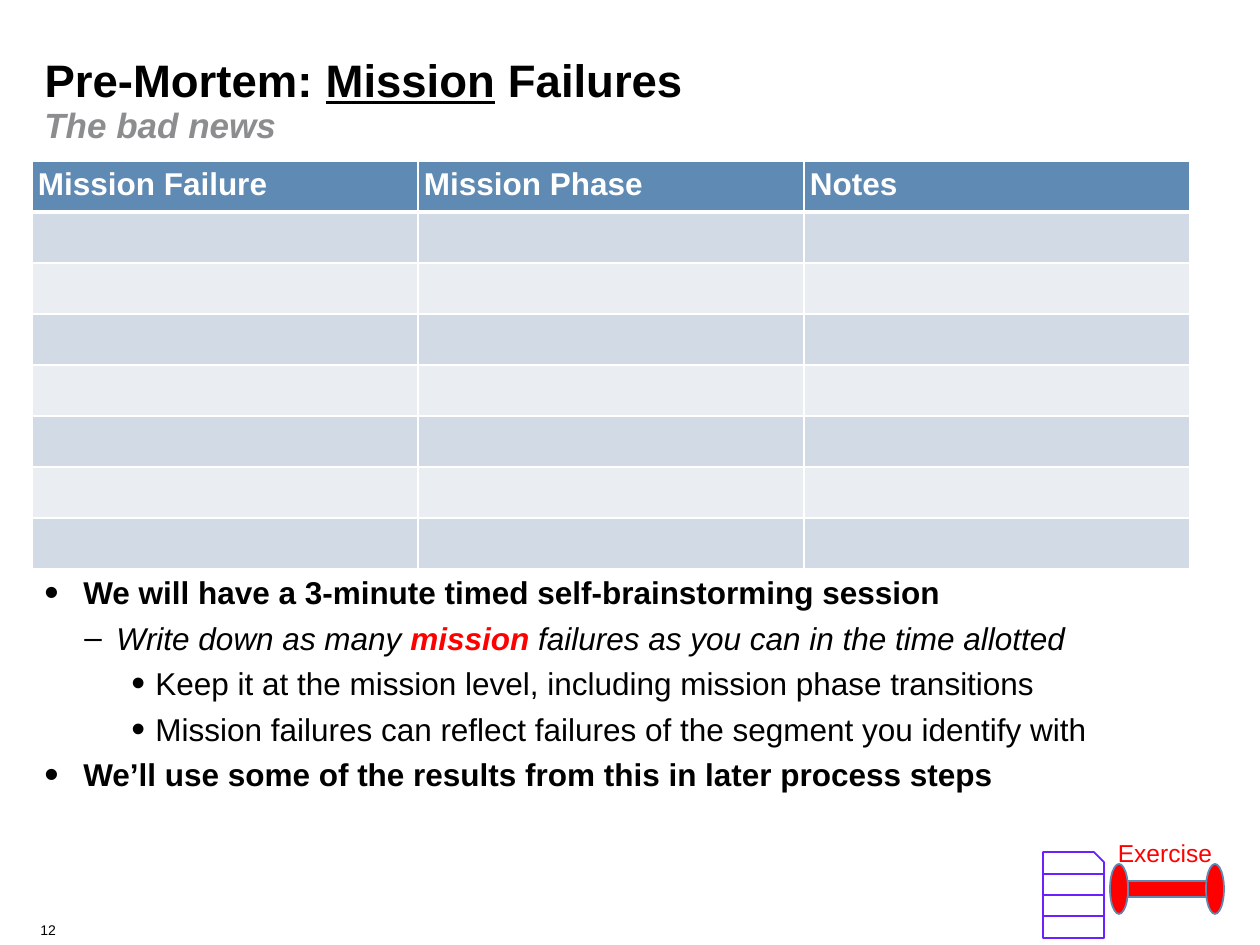
from lxml import etree
from pptx import Presentation
from pptx import util as u
from pptx.dml.color import RGBColor
from pptx.enum import shapes, text
from pptx.oxml.ns import qn

# Content: a run is (text, style), style letters: b bold, i italic, u underline, r red
TITLE = [("Pre-Mortem: ", "b"), ("Mission", "bu"), (" Failures", "b")]
SUBTITLE = [("The bad news", "bi")]
HEADINGS = ["Mission Failure", "Mission Phase", "Notes"]
EMPTY_ROWS = 7
POINTS = [
    (0, [("We will have a 3-minute timed self-brainstorming session", "b")]),
    (1, [("Write down as many ", "i"), ("mission", "bir"),
         (" failures as you can in the time allotted", "i")]),
    (2, [("Keep it at the mission level, including mission phase transitions", "")]),
    (2, [("Mission failures can reflect failures of the segment you identify with", "")]),
    (0, [("We’ll use some of the results from this in later process steps", "b")]),
]
# Per level: text margin px, hanging px, bullet, bullet size %
LEVELS = [(39, 39, "•", 130), (72, 32, "–", 100), (111, 24, "•", 125)]

FONT = "Arial"
BLACK, WHITE, RED, GREY = "000000", "FFFFFF", "FF0000", "8C8D8E"
BLUE, PURPLE, BANDS = "5E8AB4", "6A20FF", ["D2DAE5", "EAEDF2"]
SCALE = 914400 / 126


def px(n):
    return u.Emu(round(n * SCALE))


def rgb(value):
    return RGBColor.from_string(value)


def write(paragraph, runs, size, color=BLACK):
    for words, style in runs:
        run = paragraph.add_run()
        run.text = words
        font = run.font
        font.name, font.size = FONT, u.Pt(size)
        font.bold, font.italic, font.underline = (s in style for s in "biu")
        font.color.rgb = rgb(RED if "r" in style else color)


def text_box(parent, left, top, width, height):
    frame = parent.shapes.add_textbox(*map(px, (left, top, width, height))).text_frame
    frame.word_wrap = True
    return frame


def add_bullet(paragraph, level):
    margin, hanging, char, percent = LEVELS[level]
    paragraph.level = level
    props = paragraph._p.get_or_add_pPr()
    props.set("marL", str(px(margin)))
    props.set("indent", str(-px(hanging)))
    for tag, key, value in [("a:buSzPct", "val", str(percent * 1000)),
                            ("a:buFont", "typeface", FONT),
                            ("a:buChar", "char", char)]:
        etree.SubElement(props, qn(tag)).set(key, value)


def add_borders(cell, bottom):
    props = cell._tc.get_or_add_tcPr()
    for i, (side, points) in enumerate([("L", 1), ("R", 1), ("T", 1), ("B", bottom)]):
        line = etree.Element(qn("a:ln" + side), w=str(u.Pt(points)))
        fill = etree.SubElement(line, qn("a:solidFill"))
        etree.SubElement(fill, qn("a:srgbClr"), val=WHITE)
        props.insert(i, line)


def add_shape(group, kind, box, fill, line):
    shape = group.shapes.add_shape(kind, *map(px, box))
    shape.shadow.inherit = False
    shape.fill.solid()
    shape.fill.fore_color.rgb = rgb(fill)
    shape.line.color.rgb = rgb(line)
    shape.line.width = u.Pt(1)


prs = Presentation()
prs.slide_width, prs.slide_height = px(1260), px(945)
slide = prs.slides.add_slide(prs.slide_layouts[5])

# Title and subtitle
title = slide.shapes.title
title.left, title.top, title.width, title.height = map(px, (32, 41, 1134, 72))
title.text_frame.vertical_anchor = text.MSO_ANCHOR.BOTTOM
title.text_frame.paragraphs[0].alignment = text.PP_ALIGN.LEFT
write(title.text_frame.paragraphs[0], TITLE, 26)
write(text_box(slide, 32, 97, 1134, 84).paragraphs[0], SUBTITLE, 20, GREY)

# Worksheet table
COL, ROW = 386, 51
table = slide.shapes.add_table(EMPTY_ROWS + 1, len(HEADINGS), px(32), px(161),
                               px(COL * len(HEADINGS)), px(ROW * (EMPTY_ROWS + 1))).table
for column in table.columns:
    column.width = px(COL)
for r, row in enumerate(table.rows):
    row.height = px(ROW)
    for c, cell in enumerate(row.cells):
        cell.margin_left = cell.margin_right = cell.margin_top = cell.margin_bottom = px(6)
        cell.fill.solid()
        cell.fill.fore_color.rgb = rgb(BANDS[(r - 1) % 2] if r else BLUE)
        add_borders(cell, 1 if r else 3)
        if r == 0:
            write(cell.text_frame.paragraphs[0], [(HEADINGS[c], "b")], 18, WHITE)

# Instructions
instructions = text_box(slide, 32, 567, 1200, 332)
for i, (level, runs) in enumerate(POINTS):
    paragraph = instructions.add_paragraph() if i else instructions.paragraphs[0]
    add_bullet(paragraph, level)
    if i:
        paragraph.space_before = u.Pt(4.4)
    write(paragraph, runs, 18)

# Worksheet icon: a sheet with three ruled lines
SHEET = (1043, 852, 61, 86)
sheet = slide.shapes.add_group_shape()
add_shape(sheet, shapes.MSO_SHAPE.SNIP_1_RECTANGLE, SHEET, WHITE, PURPLE)
for y in (874, 895, 916):
    rule = sheet.shapes.add_connector(shapes.MSO_CONNECTOR.STRAIGHT, px(SHEET[0]), px(y),
                                      px(SHEET[0] + SHEET[2]), px(y))
    rule.line.color.rgb = rgb(PURPLE)
    rule.line.width = u.Pt(1)
    etree.SubElement(rule._element.spPr, qn("a:effectLst"))

# Exercise icon: a labelled dumbbell
dumbbell = slide.shapes.add_group_shape()
add_shape(dumbbell, shapes.MSO_SHAPE.RECTANGLE, (1128, 881, 87, 16), RED, BLUE)
for x in (1206, 1110):
    add_shape(dumbbell, shapes.MSO_SHAPE.OVAL, (x, 864, 18, 50), RED, BLUE)
label = text_box(dumbbell, 1099, 832, 132, 43).paragraphs[0]
label.alignment = text.PP_ALIGN.CENTER
write(label, [("Exercise", "r")], 14)

# Slide number
write(text_box(slide, 28, 915, 96, 30).paragraphs[0], [("12", "")], 8)

prs.save("out.pptx")
